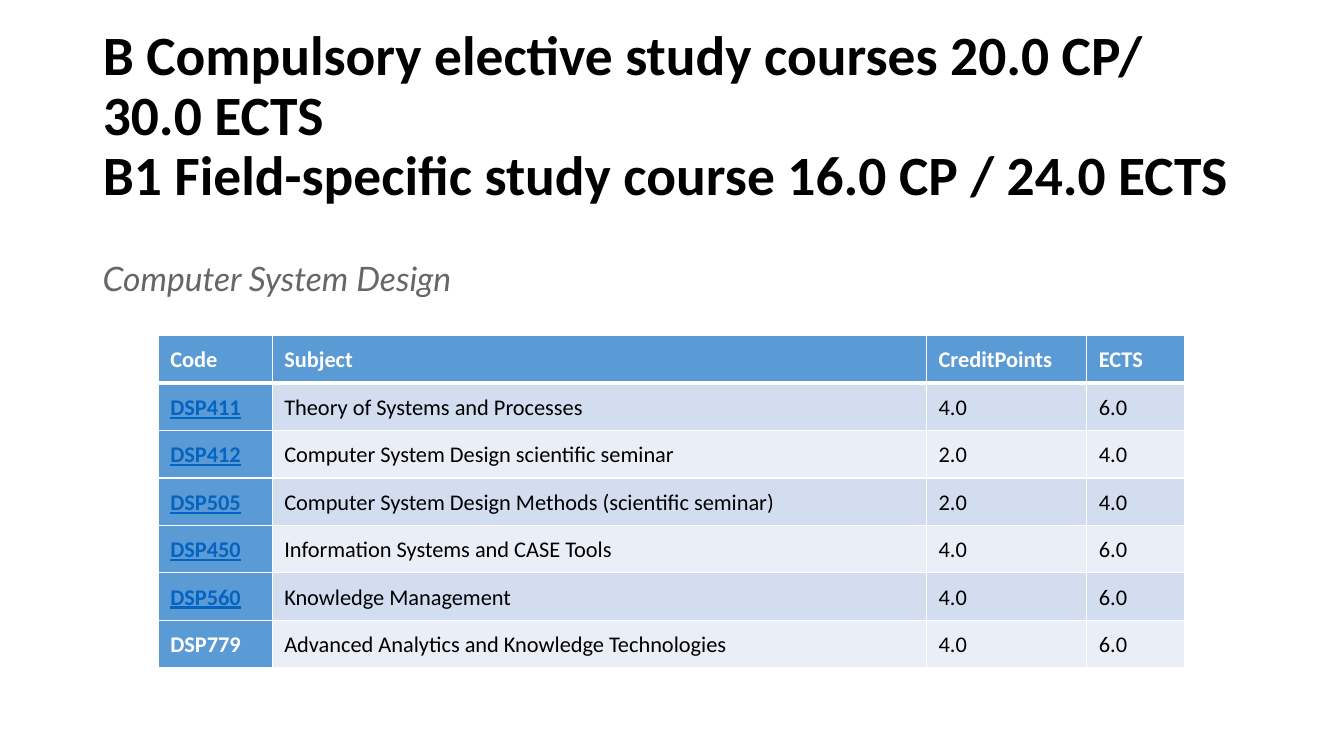
from dataclasses import dataclass

from lxml import etree
from pptx import Presentation
from pptx.dml.color import RGBColor
from pptx.enum.text import MSO_ANCHOR, MSO_AUTO_SIZE, PP_ALIGN
from pptx.oxml.ns import qn
from pptx.util import Inches, Pt

TITLE_ONLY = 5
MIDDLE, BOTTOM = MSO_ANCHOR.MIDDLE, MSO_ANCHOR.BOTTOM
LEFT = PP_ALIGN.LEFT
NO_AUTOFIT, GROW_SHAPE = MSO_AUTO_SIZE.NONE, MSO_AUTO_SIZE.SHAPE_TO_FIT_TEXT


@dataclass(frozen=True)
class Theme:
    body_font: str = "Calibri"
    accent_font: str = "Lato"
    title_size: float = 39.6
    subtitle_size: int = 24
    table_size: int = 16
    ink: str = "000000"
    muted: str = "666666"
    white: str = "FFFFFF"
    link: str = "0563C1"
    header: str = "5B9BD5"
    bands: tuple = ("D2DEEF", "EAEFF7")
    rule: int = 1
    header_rule: int = 3


THEME = Theme()

TITLE = ("B Compulsory elective study courses 20.0 CP/ 30.0 ECTS\v"
         "B1 Field-specific study course 16.0 CP / 24.0 ECTS")
HEADINGS = ("Code", "Subject", "CreditPoints", "ECTS")
COURSES = (
    ("DSP411", "Theory of Systems and Processes", "4.0", "6.0"),
    ("DSP412", "Computer System Design scientific seminar", "2.0", "4.0"),
    ("DSP505", "Computer System Design Methods (scientific seminar)", "2.0", "4.0"),
    ("DSP450", "Information Systems and CASE Tools", "4.0", "6.0"),
    ("DSP560", "Knowledge Management", "4.0", "6.0"),
    ("DSP779", "Advanced Analytics and Knowledge Technologies", "4.0", "6.0"),
)
UNDERLINED_CODES = {"DSP411", "DSP412", "DSP505", "DSP450", "DSP560"}
COLUMN_WIDTHS = (1.13, 6.49, 1.59, 0.97)
ROW_HEIGHT = 0.46


def format_text(frame, font, size, color, bold=False, italic=False,
                underline=False, line_spacing=1.0):
    for para in frame.paragraphs:
        para.alignment = LEFT
        para.line_spacing = line_spacing
        for span in para.runs:
            span.font.name = font
            span.font.size = Pt(size)
            span.font.color.rgb = RGBColor.from_string(color)
            span.font.bold = bold
            span.font.italic = italic
            span.font.underline = underline


def place_title(page):
    title = page.shapes.title
    title.left, title.top = Inches(0.92), Inches(0.74)
    title.width, title.height = Inches(11.5), Inches(1.45)
    frame = title.text_frame
    frame.text = TITLE
    frame.word_wrap = True
    frame.auto_size = NO_AUTOFIT
    frame.vertical_anchor = MIDDLE
    frame.margin_bottom = Inches(0.65)  # lifts the centred lines above the subtitle
    format_text(frame, THEME.body_font, THEME.title_size, THEME.ink,
                bold=True, line_spacing=0.9)


def add_subtitle(page):
    box = page.shapes.add_textbox(Inches(0.92), Inches(2.51), Inches(4.04), Inches(0.5))
    frame = box.text_frame
    frame.text = "Computer System Design"
    frame.word_wrap = False
    frame.auto_size = GROW_SHAPE
    format_text(frame, THEME.accent_font, THEME.subtitle_size, THEME.muted, italic=True)


def set_borders(cell, top, bottom):
    """Draw white cell edges; top and bottom are widths in points."""
    properties = cell._tc.get_or_add_tcPr()
    widths = {"lnL": THEME.rule, "lnR": THEME.rule, "lnT": top, "lnB": bottom}
    for edge, width in widths.items():
        line = etree.SubElement(properties, qn(f"a:{edge}"), w=str(Pt(width)))
        fill = etree.SubElement(line, qn("a:solidFill"))
        etree.SubElement(fill, qn("a:srgbClr"), val=THEME.white)


def cell_colors(row, column, text):
    """Return the fill and the text colour of a table cell."""
    if text in UNDERLINED_CODES:
        return THEME.header, THEME.link
    if row == 0 or column == 0:
        return THEME.header, THEME.white
    return THEME.bands[(row - 1) % 2], THEME.ink


def fill_cell(cell, row, column, text):
    fill, color = cell_colors(row, column, text)
    set_borders(cell, top=THEME.header_rule if row == 1 else THEME.rule,
                bottom=THEME.header_rule if row == 0 else THEME.rule)
    cell.fill.solid()
    cell.fill.fore_color.rgb = RGBColor.from_string(fill)
    cell.vertical_anchor = BOTTOM
    cell.margin_left = cell.margin_right = Inches(0.12)
    cell.margin_top = cell.margin_bottom = Inches(0.09)
    cell.text_frame.text = text
    format_text(cell.text_frame, THEME.body_font, THEME.table_size, color,
                bold=row == 0 or column == 0,
                underline=text in UNDERLINED_CODES, line_spacing=1.07)


def add_course_table(page):
    rows = (HEADINGS, *COURSES)
    table = page.shapes.add_table(
        len(rows), len(HEADINGS), Inches(1.57), Inches(3.33),
        Inches(sum(COLUMN_WIDTHS)), Inches(ROW_HEIGHT * len(rows))).table
    table.first_col = True
    for column, width in zip(table.columns, COLUMN_WIDTHS):
        column.width = Inches(width)
    for row, texts in enumerate(rows):
        table.rows[row].height = Inches(ROW_HEIGHT)
        for column, text in enumerate(texts):
            fill_cell(table.cell(row, column), row, column, text)


def main():
    deck = Presentation()
    deck.slide_width, deck.slide_height = Inches(13.33), Inches(7.5)
    page = deck.slides.add_slide(deck.slide_layouts[TITLE_ONLY])
    place_title(page)
    add_course_table(page)
    add_subtitle(page)
    deck.save("out.pptx")


if __name__ == "__main__":
    main()
